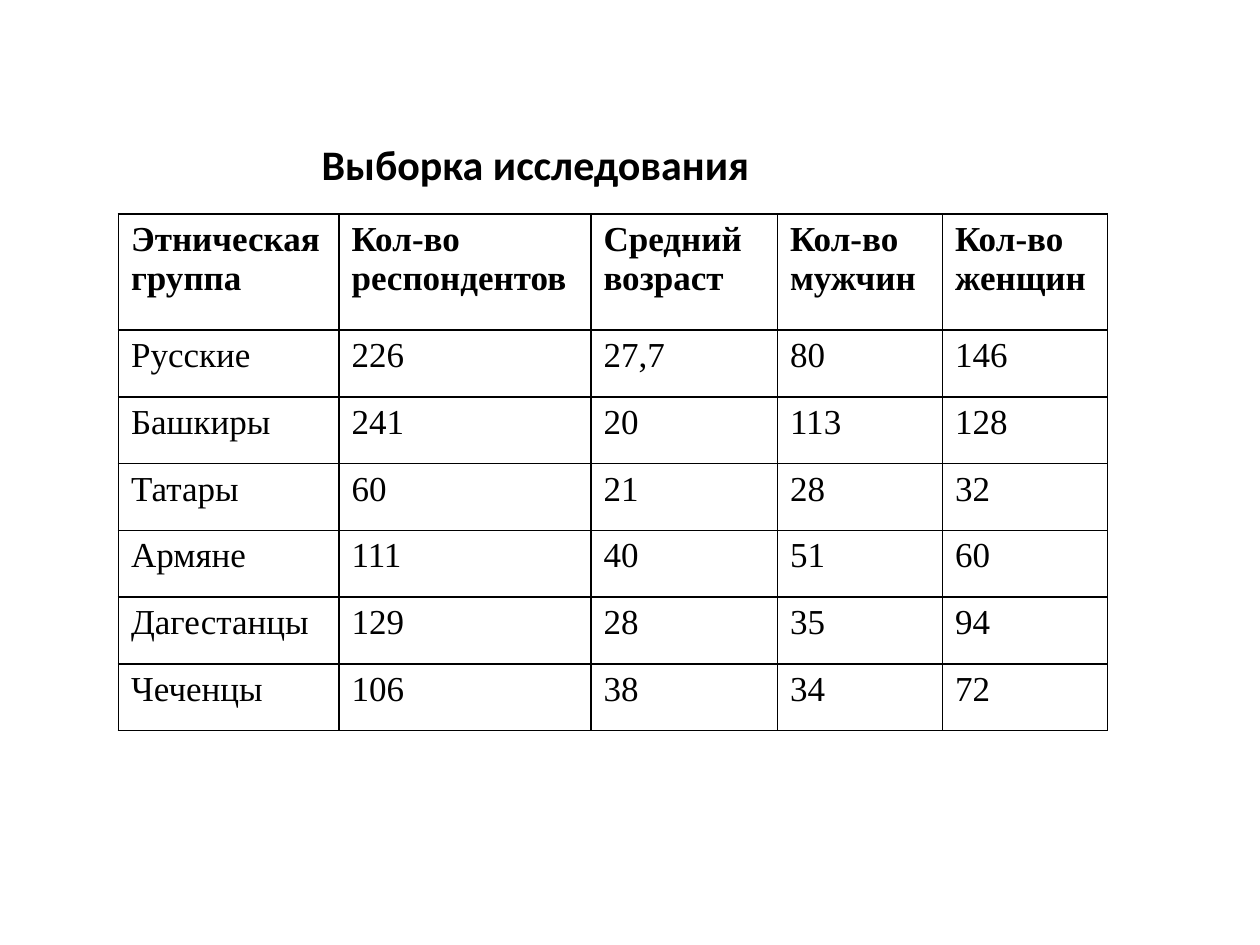
from dataclasses import dataclass

from lxml import etree
from pptx import Presentation
from pptx import util as u
from pptx.dml.color import RGBColor
from pptx.enum import text
from pptx.oxml import ns


@dataclass(frozen=True)
class Theme:
    """Colours, fonts and type sizes of the slide."""
    ink: str = "000000"
    title_font: str = "Calibri"
    table_font: str = "Times New Roman"
    title_size: int = 24
    table_size: int = 20
    border_width: int = 1


THEME = Theme()
TITLE = "Выборка исследования"
HEADER = [
    ("Этническая", "группа"),
    ("Кол-во", "респондентов"),
    ("Средний", "возраст"),
    ("Кол-во", "мужчин"),
    ("Кол-во", "женщин"),
]
GROUPS = [
    ("Русские", "226", "27,7", "80", "146"),
    ("Башкиры", "241", "20", "113", "128"),
    ("Татары", "60", "21", "28", "32"),
    ("Армяне", "111", "40", "51", "60"),
    ("Дагестанцы", "129", "28", "35", "94"),
    ("Чеченцы", "106", "38", "34", "72"),
]
COLUMN_WIDTHS = (1.75, 2, 1.48, 1.31, 1.31)
HEADER_HEIGHT = 0.92
ROW_HEIGHT = 0.53


def write_lines(frame, lines, alignment, font, size, bold):
    """Write each line as one paragraph with a single styled run."""
    for index, line in enumerate(lines):
        paragraph = frame.add_paragraph() if index else frame.paragraphs[0]
        paragraph.alignment = alignment
        run = paragraph.add_run()
        run.text = line
        run.font.name = font
        run.font.size = u.Pt(size)
        run.font.bold = bold
        run.font.color.rgb = RGBColor.from_string(THEME.ink)


def add_borders(cell):
    """Draw a solid line on all four sides of a cell."""
    properties = cell._tc.get_or_add_tcPr()
    for index, side in enumerate(("lnL", "lnR", "lnT", "lnB")):
        line = etree.Element(ns.qn(f"a:{side}"), w=str(u.Pt(THEME.border_width)))
        fill = etree.SubElement(line, ns.qn("a:solidFill"))
        etree.SubElement(fill, ns.qn("a:srgbClr"), val=THEME.ink)
        properties.insert(index, line)


def add_title(slide, left, top, width, height):
    """Place the centred heading in its box."""
    frame = slide.shapes.add_textbox(left, top, width, height).text_frame
    frame.word_wrap = True
    frame.vertical_anchor = text.MSO_ANCHOR.MIDDLE
    write_lines(frame, [TITLE], text.PP_ALIGN.CENTER,
                THEME.title_font, THEME.title_size, True)


def add_sample_table(slide, left, top, width, height):
    """Place the table of respondents by ethnic group."""
    rows = [HEADER] + [[(value,) for value in group] for group in GROUPS]
    table = slide.shapes.add_table(
        len(rows), len(HEADER), left, top, width, height).table
    table.first_row = False
    table.horz_banding = False
    for column, column_width in zip(table.columns, COLUMN_WIDTHS):
        column.width = u.Inches(column_width)
    for row_index, row in enumerate(rows):
        is_header = row_index == 0
        table.rows[row_index].height = u.Inches(
            HEADER_HEIGHT if is_header else ROW_HEIGHT)
        for column_index, lines in enumerate(row):
            cell = table.cell(row_index, column_index)
            cell.fill.background()
            add_borders(cell)
            write_lines(cell.text_frame, lines, text.PP_ALIGN.JUSTIFY,
                        THEME.table_font, THEME.table_size, is_header)


def main():
    """Build the slide and save the presentation."""
    presentation = Presentation()
    presentation.slide_width = u.Inches(10)
    presentation.slide_height = u.Inches(7.5)
    slide = presentation.slides.add_slide(presentation.slide_layouts[6])
    add_title(slide, u.Inches(0), u.Inches(0.67), u.Inches(8.5), u.Inches(1.25))
    add_sample_table(slide, u.Inches(0.94), u.Inches(1.7),
                     u.Inches(sum(COLUMN_WIDTHS)),
                     u.Inches(HEADER_HEIGHT + ROW_HEIGHT * len(GROUPS)))
    presentation.save("out.pptx")


if __name__ == "__main__":
    main()
